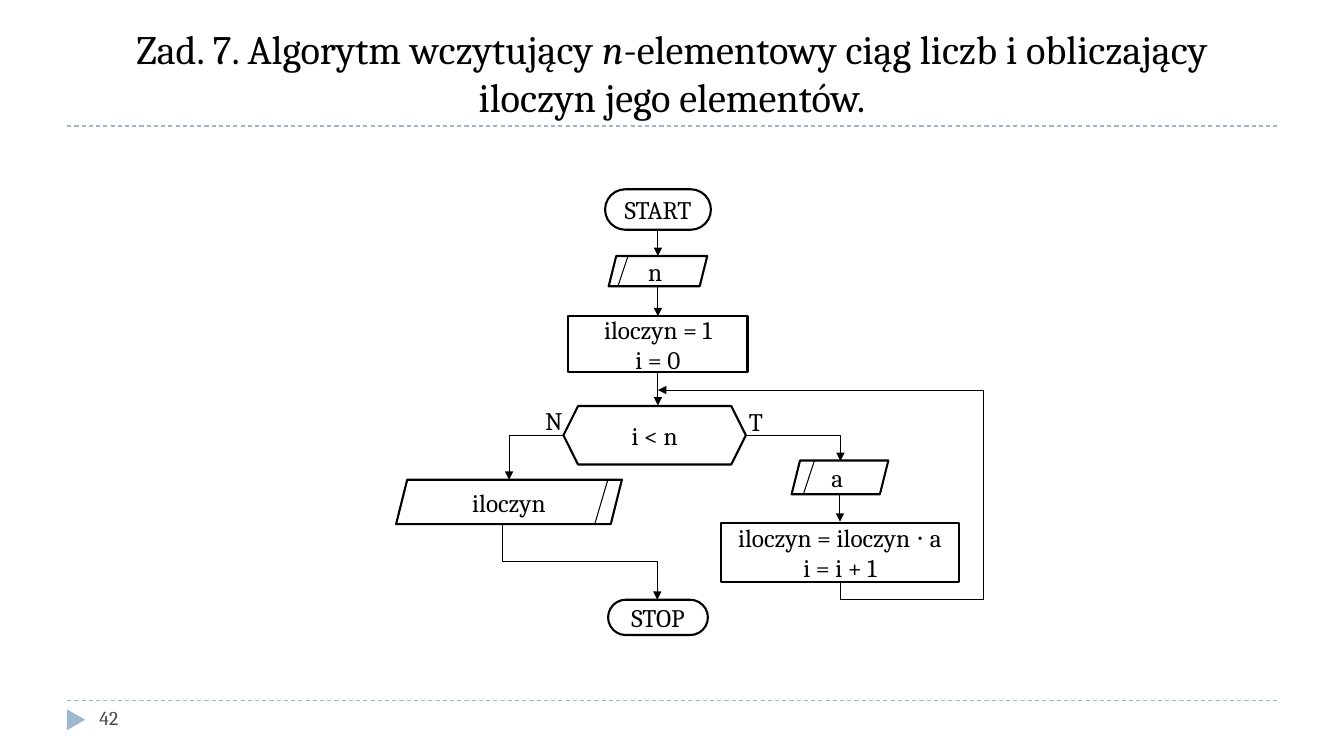
import pptx
import pptx.util
import pptx.dml.color
import pptx.enum.dml
import pptx.enum.shapes
import pptx.enum.text
import pptx.oxml
import pptx.oxml.ns

Pt = pptx.util.Pt
SHAPE = pptx.enum.shapes.MSO_SHAPE
LINK = pptx.enum.shapes.MSO_CONNECTOR
ALIGN = pptx.enum.text.PP_ALIGN
ANCHOR = pptx.enum.text.MSO_ANCHOR

FONT = "Cambria"
COLORS = {"ink": "000000", "paper": "FFFFFF", "accent": "9FB8CD", "number": "464653"}

TITLE = [
    ("Zad. 7. Algorytm wczytujący ", False),
    ("n", True),
    ("-elementowy ciąg liczb i obliczający iloczyn jego elementów.", False),
]
MAIN_X, LOOP_X = 470, 600
BLOCKS = [
    (SHAPE.ROUNDED_RECTANGLE, MAIN_X, 135.2, 75.6, 28.9, ["START"], None),
    (SHAPE.PARALLELOGRAM, MAIN_X, 182.9, 70.4, 21.6, ["n "], None),
    (SHAPE.RECTANGLE, MAIN_X, 225.9, 128, 39.8, ["iloczyn = 1", "i = 0"], "paper"),
    (SHAPE.HEXAGON, 467.6, 290, 130.3, 41.8, ["i < n"], None),
    (SHAPE.PARALLELOGRAM, 363.6, 342.7, 161.3, 31.7, ["iloczyn"], None),
    (SHAPE.PARALLELOGRAM, LOOP_X, 329, 69.1, 24.1, ["a "], None),
    (SHAPE.RECTANGLE, LOOP_X, 373.9, 170, 41.8, ["iloczyn = iloczyn ⋅ a", "i = i + 1"], "paper"),
    (SHAPE.ROUNDED_RECTANGLE, MAIN_X, 428.4, 71.3, 25.2, ["STOP"], None),
]
BRANCH_LABELS = [("T", 527.8, 286.6, 28.8), ("N", 382.3, 285.8, 30.2)]
SLASHES = [
    (448.6, 182.9, 441.4, 204.5),
    (434.2, 342.7, 424.8, 374.4),
    (581.8, 329, 573.8, 353.1),
]
ARROWS = [
    (MAIN_X, 164.1, 182.9),
    (MAIN_X, 204.5, 225.9),
    (MAIN_X, 265.7, 289.7),
    (LOOP_X, 353.1, 372.6),
]
ELBOWS = [
    ("bentConnector2", 363.6, 311, 38.9, 31.7, 180, "flipV", None, True),
    ("bentConnector2", 532.8, 311, 67.5, 18.3, 0, None, None, True),
    ("bentConnector3", 387.4, 346.3, 54, 110.2, 270, "flipH", 50000, True),
    ("bentConnector2", 645.1, 370.8, 12.2, 102.2, 270, "flipH", None, False),
    ("bentConnector3", MAIN_X, 278.6, 232.6, 149.8, 180, None, 100, True),
]


def rgb(name):
    return pptx.dml.color.RGBColor.from_string(COLORS[name])


def add_run(p, text, size, color="ink", italic=False):
    r = p.add_run()
    r.text = text
    r.font.name = FONT
    r.font.size = Pt(size)
    r.font.italic = italic
    r.font.color.rgb = rgb(color)


def add_label(s, runs, box, size, color="ink", align=ALIGN.LEFT, anchor=ANCHOR.TOP):
    tf = s.shapes.add_textbox(*map(Pt, box)).text_frame
    tf.word_wrap = True
    tf.vertical_anchor = anchor
    p = tf.paragraphs[0]
    p.alignment = align
    for text, italic in runs:
        add_run(p, text, size, color, italic)


def add_block(s, kind, center, top, width, height, lines, fill):
    sp = s.shapes.add_shape(kind, Pt(center - width / 2), Pt(top), Pt(width), Pt(height))
    sp.shadow.inherit = False
    if kind == SHAPE.ROUNDED_RECTANGLE:
        sp.adjustments[0] = 0.5
    if fill:
        sp.fill.solid()
        sp.fill.fore_color.rgb = rgb(fill)
    else:
        sp.fill.background()
    sp.line.color.rgb = rgb("ink")
    sp.line.width = Pt(1.5)
    tf = sp.text_frame
    tf.word_wrap = True
    tf.vertical_anchor = ANCHOR.MIDDLE
    for i, line in enumerate(lines):
        p = tf.add_paragraph() if i else tf.paragraphs[0]
        p.alignment = ALIGN.CENTER
        add_run(p, line, 18)


def add_line(s, x1, y1, x2, y2, kind=LINK.STRAIGHT, color="ink", arrow=False):
    sp = s.shapes.add_connector(kind, Pt(x1), Pt(y1), Pt(x2), Pt(y2))
    sp.line.color.rgb = rgb(color)
    sp.line.width = Pt(0.75)
    props = sp._element.spPr
    if arrow:
        pptx.oxml.ns.qn("a:tailEnd")
        tail = props.ln.makeelement(pptx.oxml.ns.qn("a:tailEnd"), {"type": "triangle"})
        props.ln.append(tail)
    props.append(props.makeelement(pptx.oxml.ns.qn("a:effectLst"), {}))
    return sp


def add_elbow(s, preset, x, y, width, height, turn, flip, bend, arrow):
    sp = add_line(s, x, y, x + width, y + height, LINK.ELBOW, arrow=arrow)
    props = sp._element.spPr
    frame = props.find(pptx.oxml.ns.qn("a:xfrm"))
    frame.set("rot", str(turn * 60000))
    if flip:
        frame.set(flip, "1")
    geometry = props.find(pptx.oxml.ns.qn("a:prstGeom"))
    geometry.set("prst", preset)
    if bend is not None:
        guides = geometry.find(pptx.oxml.ns.qn("a:avLst"))
        guide = {"name": "adj1", "fmla": f"val {bend}"}
        guides.append(guides.makeelement(pptx.oxml.ns.qn("a:gd"), guide))


def main():
    prs = pptx.Presentation()
    prs.slide_width, prs.slide_height = Pt(960), Pt(540)
    s = prs.slides.add_slide(prs.slide_layouts[6])

    for y in (500.4, 90):
        rule = add_line(s, 48, y, 912, y, color="accent")
        rule.line.dash_style = pptx.enum.dml.MSO_LINE.DASH
    marker = s.shapes.add_shape(SHAPE.ISOSCELES_TRIANGLE, Pt(46.8), Pt(511.6), Pt(15), Pt(13))
    marker.top = Pt(507.6)
    marker.rotation = 90
    marker.shadow.inherit = False
    marker.fill.solid()
    marker.fill.fore_color.rgb = rgb("accent")
    marker.line.fill.background()

    add_label(s, TITLE, (48, 12.2, 864, 77.8), 28.8, align=ALIGN.CENTER, anchor=ANCHOR.BOTTOM)
    add_label(s, [("42", False)], (64, 500.4, 208, 28.8), 14, "number")
    for block in BLOCKS:
        add_block(s, *block)
    for text, x, y, width in BRANCH_LABELS:
        add_label(s, [(text, False)], (x, y, width, 28.8), 18)
    for slash in SLASHES:
        add_line(s, *slash)
    for x, y1, y2 in ARROWS:
        add_line(s, x, y1, x, y2, arrow=True)
    for elbow in ELBOWS:
        add_elbow(s, *elbow)
    prs.save("out.pptx")


if __name__ == "__main__":
    main()
